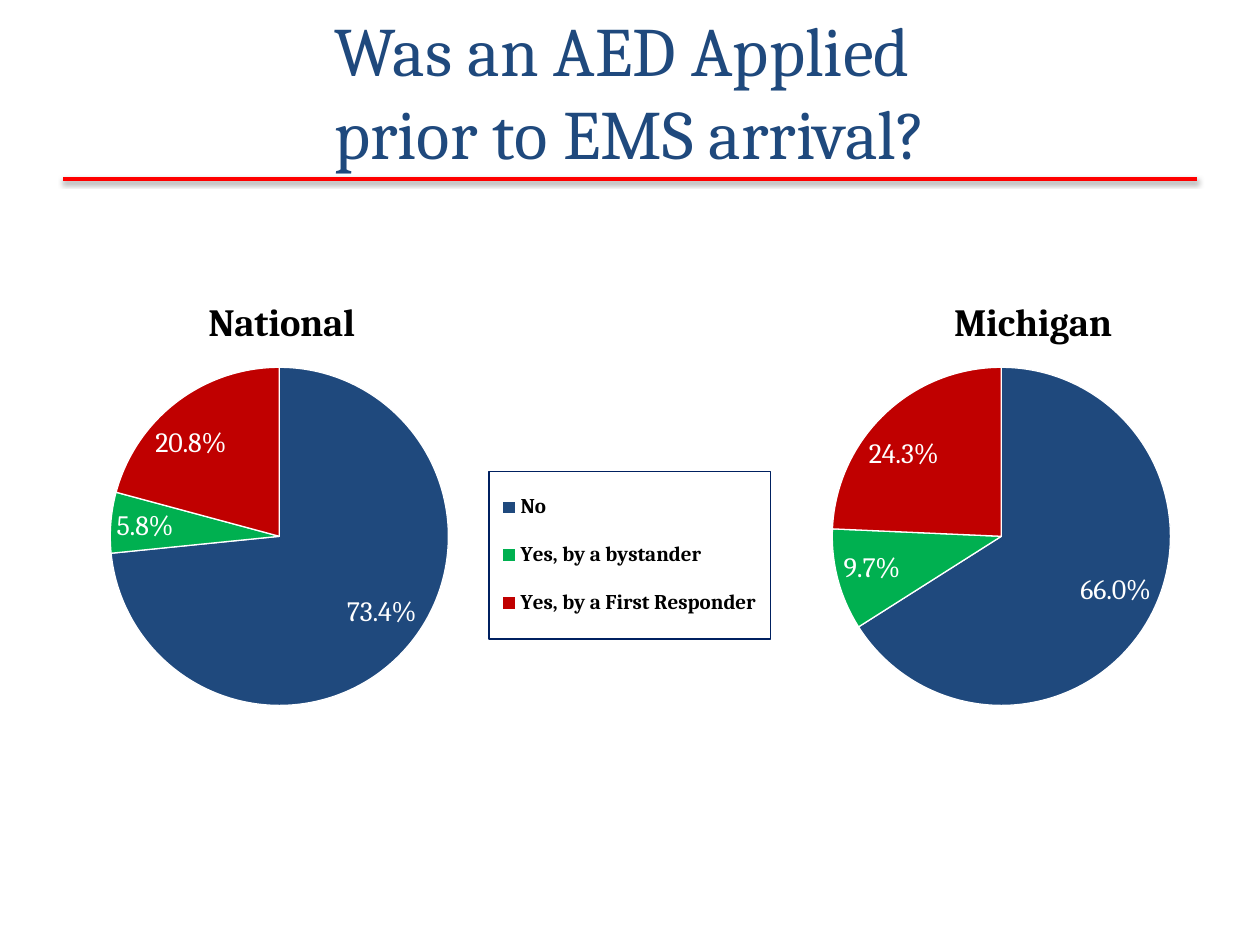
import lxml.etree
import pptx
import pptx.chart.data
import pptx.dml.color
import pptx.enum.chart
import pptx.enum.shapes
import pptx.enum.text
import pptx.oxml
import pptx.oxml.ns
import pptx.util

PX = 914400 / 126
FONT = "Cambria"
NAVY, GREEN, CRIMSON = "1F497D", "00B050", "C00000"
ANSWERS = ["No", "Yes, by a bystander", "Yes, by a First Responder"]
PLOT_AREA = (0.095, 0.273, 0.548, 0.542)
LEGEND_AREA = (0.635, 0.44, 0.358, 0.268)


def px(*lengths):
    return [pptx.util.Emu(round(length * PX)) for length in lengths]


def color(value):
    return pptx.dml.color.RGBColor.from_string(value)


def style_font(font, size, fill, bold=False):
    values = {"name": FONT, "size": pptx.util.Pt(size), "bold": bold}
    for name, value in values.items():
        setattr(font, name, value)
    font.fill.solid()
    font.fill.fore_color.rgb = color(fill)


def add_heading(slide, box, text):
    """Place the centred title and the red rule beneath it."""
    left, top, width, height = box
    rule = slide.shapes.add_connector(
        pptx.enum.shapes.MSO_CONNECTOR.STRAIGHT,
        *px(left, top + 168, left + width, top + 168))
    rule.line.color.rgb = color("FF0000")
    rule.line.width = pptx.util.Pt(2)
    rule._element.spPr.append(pptx.oxml.parse_xml(
        f'<a:effectLst {pptx.oxml.ns.nsdecls("a")}>'
        '<a:outerShdw blurRad="39370" dist="20320" dir="5400000" rotWithShape="0">'
        '<a:srgbClr val="000000"><a:alpha val="38000"/></a:srgbClr>'
        '</a:outerShdw></a:effectLst>'))

    title = slide.shapes.add_textbox(*px(left, top, width, height))
    frame = title.text_frame
    frame.word_wrap = True
    frame.vertical_anchor = pptx.enum.text.MSO_ANCHOR.MIDDLE
    paragraph = frame.paragraphs[0]
    paragraph.text = text
    paragraph.alignment = pptx.enum.text.PP_ALIGN.CENTER
    for run in paragraph.runs:
        style_font(run.font, 39.6, NAVY)


def set_layout(parent, area, inner=False):
    """Fix a chart part at fractions of the chart: x, y and maybe w, h."""
    namespace = pptx.oxml.ns.nsdecls("c")
    target = '<c:layoutTarget val="inner"/>' if inner else ""
    modes = '<c:xMode val="edge"/><c:yMode val="edge"/>'
    values = "".join(f'<c:{name} val="{value}"/>' for name, value in zip("xywh", area))
    layout = pptx.oxml.parse_xml(
        f"<c:layout {namespace}><c:manualLayout>{target}{modes}{values}"
        "</c:manualLayout></c:layout>")
    for old in parent.findall(pptx.oxml.ns.qn("c:layout")):
        parent.remove(old)
    before = [child for child in parent if lxml.etree.QName(child).localname
              in ("legendPos", "legendEntry", "tx")]
    parent.insert(len(before), layout)


def add_legend(chart):
    chart.has_legend = True
    legend = chart.legend
    legend.position = pptx.enum.chart.XL_LEGEND_POSITION.RIGHT
    legend.include_in_layout = False
    style_font(legend.font, 12, "000000", True)
    set_layout(legend._element, LEGEND_AREA)
    border = pptx.oxml.parse_xml(
        f'<c:spPr {pptx.oxml.ns.nsdecls("c", "a")}><a:ln w="12700"><a:solidFill>'
        '<a:srgbClr val="002060"/></a:solidFill></a:ln></c:spPr>')
    legend._element.find(pptx.oxml.ns.qn("c:txPr")).addprevious(border)


def add_pie(slide, box, title, title_area, categories, values, legend=False):
    data = pptx.chart.data.CategoryChartData()
    data.categories = categories
    data.add_series("Series 1", values)
    chart = slide.shapes.add_chart(
        pptx.enum.chart.XL_CHART_TYPE.PIE, *px(*box), data).chart
    style_font(chart.font, 18, "000000")

    chart.has_title = True
    chart.chart_title.text_frame.text = title
    style_font(chart.chart_title.text_frame.paragraphs[0].runs[0].font, 22, "000000", True)
    chart.chart_title.include_in_layout = False
    set_layout(chart.chart_title._element, title_area)
    set_layout(chart._chartSpace.chart.plotArea, PLOT_AREA, inner=True)

    plot = chart.plots[0]
    plot.vary_by_categories = True
    for index, fill in enumerate((NAVY, GREEN, CRIMSON)):
        point = plot.series[0].points[index].format
        point.fill.solid()
        point.fill.fore_color.rgb = color(fill)
        point.line.color.rgb = color("FFFFFF")
        point.line.width = pptx.util.Pt(0.75)

    labels = plot.series[0].data_labels
    label_format = {
        "show_percentage": True, "show_value": False, "number_format": "0.0%",
        "number_format_is_linked": False,
        "position": pptx.enum.chart.XL_LABEL_POSITION.BEST_FIT,
    }
    for name, value in label_format.items():
        setattr(labels, name, value)
    style_font(labels.font, 16, "FFFFFF")

    chart.has_legend = False
    if legend:
        add_legend(chart)


def main():
    presentation = pptx.Presentation()
    presentation.slide_width, presentation.slide_height = px(1260, 945)
    slide = presentation.slides.add_slide(presentation.slide_layouts[6])
    add_heading(slide, (63, 11, 1134, 158), "Was an AED Applied \vprior to EMS arrival?")
    add_pie(slide, (-11, 197, 787, 624), "National", (0.27, 0.15),
            ANSWERS, (73.4, 5.8, 20.8), legend=True)
    add_pie(slide, (711, 197, 787, 624), "Michigan", (0.3, 0.15),
            ["1", "2", "3"], (66, 9.7, 24.3))
    presentation.save("out.pptx")


if __name__ == "__main__":
    main()
